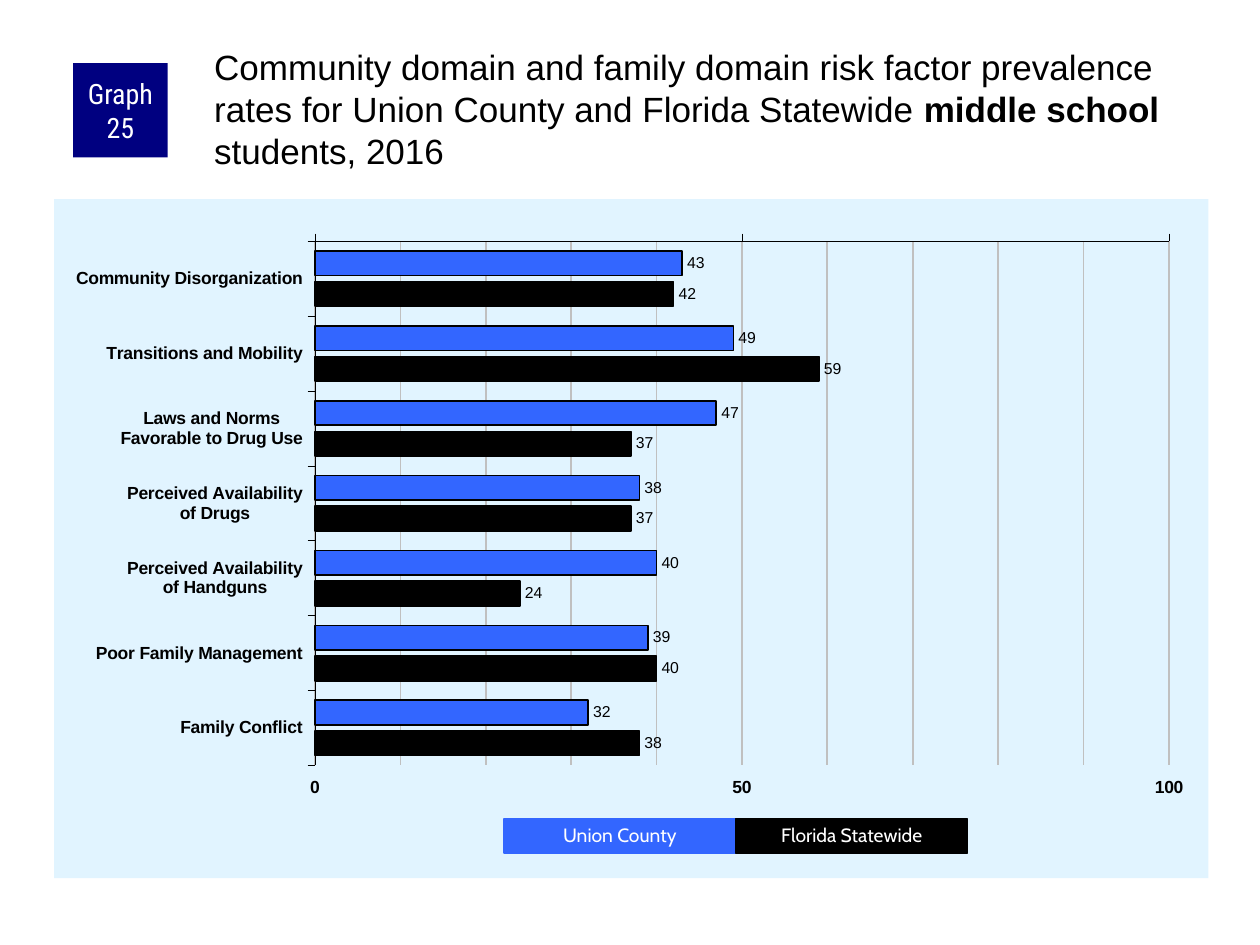
from copy import deepcopy

from lxml import etree
from pptx import Presentation
from pptx.chart.data import CategoryChartData
from pptx.dml.color import RGBColor
from pptx.enum.chart import XL_CHART_TYPE, XL_LABEL_POSITION, XL_TICK_LABEL_POSITION, XL_TICK_MARK
from pptx.enum.shapes import MSO_SHAPE
from pptx.enum.text import MSO_ANCHOR, PP_ALIGN
from pptx.oxml import parse_xml
from pptx.oxml.ns import nsdecls, qn
from pptx.util import Inches, Pt

BAR = XL_CHART_TYPE.BAR_CLUSTERED
OUTSIDE = XL_TICK_MARK.OUTSIDE
LABELS_HIGH = XL_TICK_LABEL_POSITION.HIGH
LABEL_END = XL_LABEL_POSITION.OUTSIDE_END
RECT = MSO_SHAPE.RECTANGLE
MIDDLE = MSO_ANCHOR.MIDDLE
CENTER = PP_ALIGN.CENTER

COLORS = {
    "panel": "E1F4FF", "badge": "000080", "county": "3366FF",
    "state": "000000", "ink": "000000", "grid": "C0C0C0", "white": "FFFFFF",
}
CATEGORIES = [
    "Community Disorganization", "Transitions and Mobility",
    "Laws and Norms\nFavorable to Drug Use", "Perceived Availability\nof Drugs",
    "Perceived Availability\nof Handguns", "Poor Family Management", "Family Conflict",
]
SERIES = [
    ("Union County", "county", (43, 49, 47, 38, 40, 39, 32)),
    ("Florida Statewide", "state", (42, 59, 37, 37, 24, 40, 38)),
]


def rgb(name):
    """Return the named colour."""
    return RGBColor.from_string(COLORS[name])


def set_font(font, name, size, color, bold=False):
    """Format a font."""
    font.name, font.size, font.bold = name, Pt(size), bold
    font.color.rgb = rgb(color)


def set_line(line, color, width):
    """Give a line a solid colour and a width."""
    line.color.rgb = rgb(color)
    line.width = Pt(width)


def add_box(slide, x, y, w, h, color, text, font, size):
    """Add a filled rectangle with white centred text."""
    sp = slide.shapes.add_shape(RECT, Inches(x), Inches(y), Inches(w), Inches(h))
    sp.shadow.inherit = False
    sp.fill.solid()
    sp.fill.fore_color.rgb = rgb(color)
    sp.line.fill.background()
    tf = sp.text_frame
    tf.word_wrap = True
    tf.vertical_anchor = MIDDLE
    p = tf.paragraphs[0]
    p.text = text
    p.alignment = CENTER
    set_font(p.runs[0].font, font, size, "white")
    return sp


def add_header(slide, x, y, w, h):
    """Add the graph number badge and the title beside it."""
    badge = add_box(slide, x, y + 0.17, 0.75, 0.75, "badge", "Graph 25", "Roboto Condensed", 16)
    tf = badge.text_frame
    tf.margin_left = tf.margin_right = Inches(0.05)
    tf.margin_top = tf.margin_bottom = 0

    indent = 1.09
    s = slide.shapes.add_textbox(Inches(x + indent), Inches(y), Inches(w - indent), Inches(h))
    tf = s.text_frame
    tf.word_wrap = True
    tf.margin_left = tf.margin_top = Inches(0.03)
    tf.margin_right = tf.margin_bottom = 0
    p = tf.paragraphs[0]
    p.line_spacing = Pt(24)
    for text, bold in (
        ("Community domain and family domain risk factor prevalence rates "
         "for Union County and Florida Statewide ", False),
        ("middle school", True),
        (" students, 2016", False),
    ):
        r = p.add_run()
        r.text = text
        set_font(r.font, "Arial", 20, "ink", bold)


def set_plot_area(chart, x, y, w, h):
    """Fill the chart background and fix the inner plot area."""
    space = chart._chartSpace
    fill = parse_xml(
        f'<c:spPr {nsdecls("c", "a")}><a:solidFill><a:srgbClr val="{COLORS["panel"]}"/>'
        '</a:solidFill><a:ln><a:noFill/></a:ln></c:spPr>')
    space.find(qn("c:chart")).addnext(fill)
    plot_area = space.find(qn("c:chart")).find(qn("c:plotArea"))
    old = plot_area.find(qn("c:layout"))
    if old is not None:
        plot_area.remove(old)
    layout = etree.Element(qn("c:layout"))
    manual = etree.SubElement(layout, qn("c:manualLayout"))
    for tag, val in (("layoutTarget", "inner"), ("xMode", "edge"), ("yMode", "edge"),
                     ("x", x), ("y", y), ("w", w), ("h", h)):
        etree.SubElement(manual, qn(f"c:{tag}")).set("val", str(val))
    plot_area.insert(0, layout)


def set_gridlines(axis, color, width):
    """Show major and minor gridlines in one style."""
    axis.has_major_gridlines = axis.has_minor_gridlines = True
    set_line(axis.major_gridlines.format.line, color, width)
    major, minor = (axis._element.find(qn(f"c:{tag}")) for tag in ("majorGridlines", "minorGridlines"))
    minor.append(deepcopy(major.find(qn("c:spPr"))))


def add_rates_chart(slide, x, y, w, h):
    """Add the clustered bar chart of prevalence rates."""
    data = CategoryChartData()
    data.categories = CATEGORIES
    for name, _, values in SERIES:
        data.add_series(name, values)
    chart = slide.shapes.add_chart(BAR, Inches(x), Inches(y), Inches(w), Inches(h), data).chart
    chart.has_legend = chart.has_title = False
    set_font(chart.font, "Arial", 12, "ink")
    set_plot_area(chart, 0.226, 0.062, 0.74, 0.772)

    for axis in (chart.category_axis, chart.value_axis):
        axis.major_tick_mark = OUTSIDE
        set_font(axis.tick_labels.font, "Arial", 10, "ink", True)
        set_line(axis.format.line, "ink", 0.25)
    chart.category_axis.reverse_order = True
    axis = chart.value_axis
    axis.minimum_scale, axis.maximum_scale = 0, 100
    axis.major_unit, axis.minor_unit = 50, 10
    axis.tick_label_position = LABELS_HIGH
    set_gridlines(axis, "grid", 1)

    plot = chart.plots[0]
    plot.vary_by_categories = False
    plot.gap_width, plot.overlap = 80, -25
    for series, (_, color, _) in zip(plot.series, SERIES):
        series.format.fill.solid()
        series.format.fill.fore_color.rgb = rgb(color)
        set_line(series.format.line, "ink", 1)
        labels = series.data_labels
        labels.show_value = True
        labels.position = LABEL_END
        set_font(labels.font, "Arial", 9, "ink")


def add_legend(slide, x, y, w, h):
    """Add one coloured key per series, side by side."""
    key_w = w / len(SERIES)
    for i, (name, color, _) in enumerate(SERIES):
        sp = add_box(slide, x + i * key_w, y, key_w, h, color, name, "Cabin", 11)
        set_line(sp.line, color, 0.75)
        sp.text_frame.paragraphs[0].line_spacing = 0.9


def main():
    """Build the slide and save it."""
    prs = Presentation()
    prs.slide_width, prs.slide_height = Inches(10), Inches(7.5)
    slide = prs.slides.add_slide(prs.slide_layouts[6])
    add_rates_chart(slide, 0.43, 1.58, 9.16, 5.39)
    add_header(slide, 0.58, 0.33, 9.01, 0.83)
    add_legend(slide, 4, 6.5, 3.68, 0.27)
    prs.save("out.pptx")


if __name__ == "__main__":
    main()
